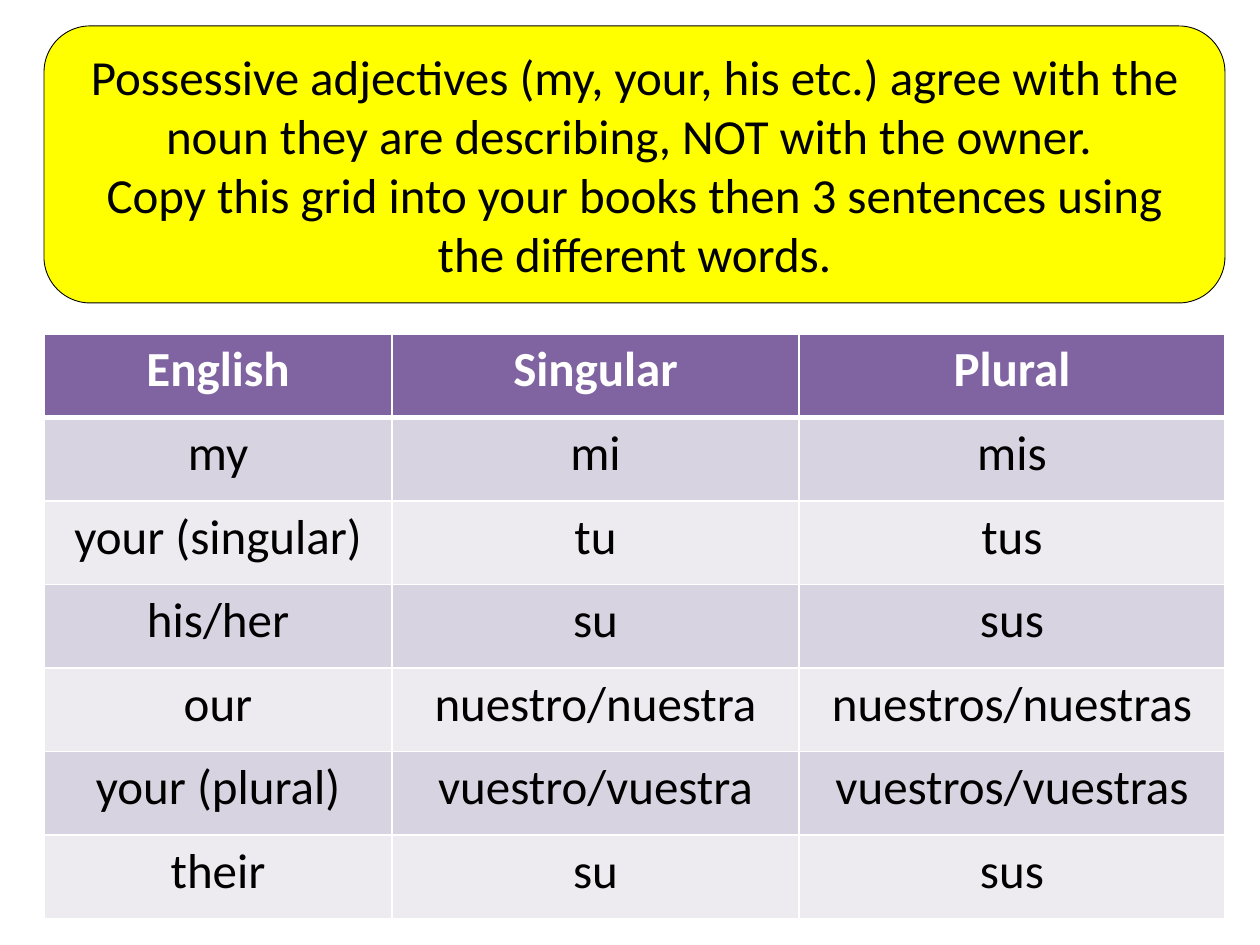
from dataclasses import dataclass

from lxml import etree
from pptx import Presentation
from pptx.dml.color import RGBColor
from pptx.enum.shapes import MSO_SHAPE
from pptx.enum.text import MSO_ANCHOR, MSO_AUTO_SIZE, PP_ALIGN
from pptx.oxml.ns import qn
from pptx.util import Emu, Pt

PX_PER_INCH = 126
ROUNDED = MSO_SHAPE.ROUNDED_RECTANGLE
CENTER = PP_ALIGN.CENTER
MIDDLE = MSO_ANCHOR.MIDDLE
GROW = MSO_AUTO_SIZE.SHAPE_TO_FIT_TEXT

BLACK = RGBColor(0x00, 0x00, 0x00)
WHITE = RGBColor(0xFF, 0xFF, 0xFF)
YELLOW = RGBColor(0xFF, 0xFF, 0x00)
PURPLE = RGBColor(0x80, 0x64, 0xA2)
BANDS = (RGBColor(0xD8, 0xD3, 0xE0), RGBColor(0xED, 0xEA, 0xF0))

RULES = (
    "Possessive adjectives (my, your, his etc.) agree with the noun "
    "they are describing, NOT with the owner. ",
    "Copy this grid into your books then 3 sentences using the different words.",
)
GRID = (
    ("English", "Singular", "Plural"),
    ("my", "mi", "mis"),
    ("your (singular)", "tu", "tus"),
    ("his/her", "su", "sus"),
    ("our", "nuestro/nuestra", "nuestros/nuestras"),
    ("your (plural)", "vuestro/vuestra", "vuestros/vuestras"),
    ("their", "su", "sus"),
)
COLUMN_WIDTHS = (348, 407, 426)


@dataclass(frozen=True)
class Box:
    left: int
    top: int
    width: int
    height: int

    def emu(self) -> tuple[Emu, ...]:
        return tuple(px(n) for n in (self.left, self.top, self.width, self.height))


@dataclass(frozen=True)
class RowStyle:
    fill: RGBColor
    color: RGBColor
    bold: bool
    bottom: int


HEADER = RowStyle(PURPLE, WHITE, True, 3)
BODY = tuple(RowStyle(fill, BLACK, False, 1) for fill in BANDS)
RULES_BOX = Box(44, 26, 1181, 277)
GRID_BOX = Box(44, 334, sum(COLUMN_WIDTHS), 585)


def px(n: int) -> Emu:
    return Emu(round(n * 914400 / PX_PER_INCH))


def write(tf, lines: tuple[str, ...], color: RGBColor, bold: bool = False) -> None:
    font_format = {"name": "Calibri", "size": Pt(28), "bold": bold}
    for i, line in enumerate(lines):
        p = tf.paragraphs[0] if i == 0 else tf.add_paragraph()
        p.alignment = CENTER
        r = p.add_run()
        r.text = line
        for name, value in font_format.items():
            setattr(r.font, name, value)
        r.font.color.rgb = color


def set_borders(cell, widths: dict[str, int]) -> None:
    """Draw white cell edges; widths are in points, in schema order."""
    tc_pr = cell._tc.get_or_add_tcPr()
    for i, (side, width) in enumerate(widths.items()):
        ln = etree.Element(qn(f"a:{side}"), w=str(Pt(width)))
        fill = etree.SubElement(ln, qn("a:solidFill"))
        etree.SubElement(fill, qn("a:srgbClr"), val=str(WHITE))
        tc_pr.insert(i, ln)


def add_rules(s, box: Box) -> None:
    sp = s.shapes.add_shape(ROUNDED, *box.emu())
    sp.shadow.inherit = False
    sp.fill.solid()
    sp.fill.fore_color.rgb = YELLOW
    sp.line.color.rgb = BLACK
    sp.line.width = Pt(0.5)
    tf = sp.text_frame
    for name, value in {
        "word_wrap": True,
        "auto_size": GROW,
        "vertical_anchor": MIDDLE,
    }.items():
        setattr(tf, name, value)
    write(tf, RULES, BLACK)


def add_grid(s, box: Box) -> None:
    table = s.shapes.add_table(len(GRID), len(COLUMN_WIDTHS), *box.emu()).table
    for column, width in zip(table.columns, COLUMN_WIDTHS):
        column.width = px(width)
    for i, words in enumerate(GRID):
        style = BODY[(i - 1) % len(BODY)] if i else HEADER
        top = HEADER.bottom if i == 1 else 1
        for j, word in enumerate(words):
            cell = table.cell(i, j)
            cell.fill.solid()
            cell.fill.fore_color.rgb = style.fill
            write(cell.text_frame, (word,), style.color, style.bold)
            set_borders(cell, {"lnL": 1, "lnR": 1, "lnT": top, "lnB": style.bottom})


def main() -> None:
    prs = Presentation()
    prs.slide_width, prs.slide_height = px(1260), px(945)
    s = prs.slides.add_slide(prs.slide_layouts[6])
    add_rules(s, RULES_BOX)
    add_grid(s, GRID_BOX)
    prs.save("out.pptx")


if __name__ == "__main__":
    main()
